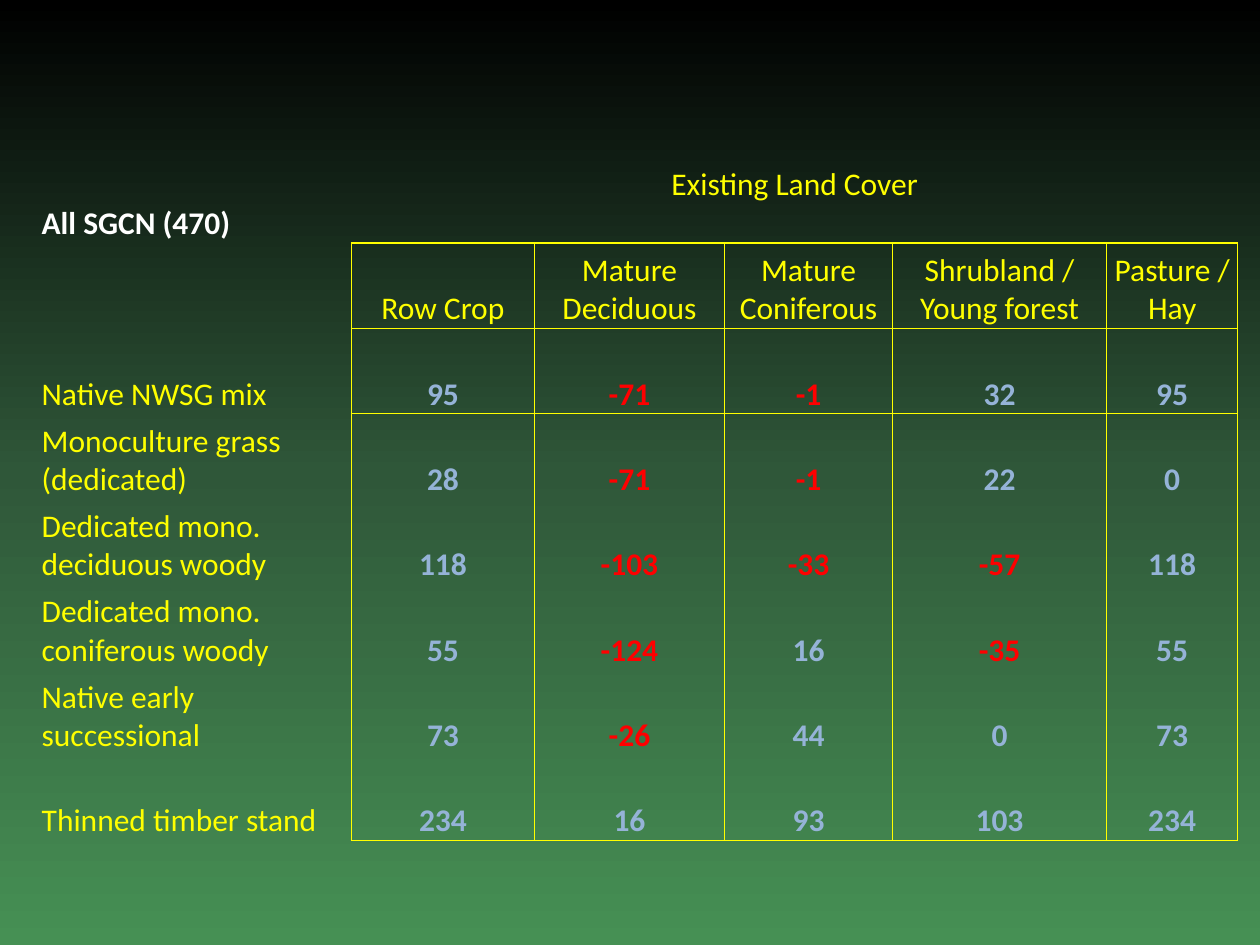
from copy import deepcopy
from dataclasses import dataclass

from lxml import etree
from pptx import Presentation
from pptx.dml.color import RGBColor
from pptx.enum.text import MSO_ANCHOR, PP_ALIGN
from pptx.oxml.ns import qn
from pptx.slide import Slide
from pptx.table import Table, _Cell
from pptx.util import Cm, Pt

BOTTOM = MSO_ANCHOR.BOTTOM
LEFT, CENTER = PP_ALIGN.LEFT, PP_ALIGN.CENTER
FONT, FONT_SIZE = "Calibri", Pt(18)
PLAIN_TABLE_STYLE = "{2D5ABB26-0587-4C30-8999-92F81FD0307C}"

COLORS = {
    "white": "FFFFFF",
    "yellow": "FFFF00",
    "gain": "95B3D7",
    "loss": "FF0000",
}
BACKGROUND_STOPS = [(0, "000000"), (0.5, "2F5739"), (1, "469054")]


@dataclass
class Conversion:
    name: str
    changes: tuple[int, ...]


LAND_COVERS = [
    "Row Crop",
    "Mature Deciduous",
    "Mature Coniferous",
    "Shrubland / Young forest",
    "Pasture / Hay",
]
CONVERSIONS = [
    Conversion("Native NWSG mix", (95, -71, -1, 32, 95)),
    Conversion("Monoculture grass (dedicated)", (28, -71, -1, 22, 0)),
    Conversion("Dedicated mono. deciduous woody", (118, -103, -33, -57, 118)),
    Conversion("Dedicated mono. coniferous woody", (55, -124, 16, -35, 55)),
    Conversion("Native early successional", (73, -26, 44, 0, 73)),
    Conversion("Thinned timber stand", (234, 16, 93, 103, 234)),
]
COLUMN_WIDTHS = [6.25, 3.68, 3.84, 3.38, 4.32, 2.64]
ROW_HEIGHT = 1.72
HEADER_ROWS = 2
ROW_COUNT = HEADER_ROWS + len(CONVERSIONS)


def paint_background(slide: Slide) -> None:
    fill = slide.background.fill
    fill.gradient()
    fill.gradient_angle = 270
    # The default gradient has two stops; add the middle one
    stop_list = next(slide.element.iter(qn("a:gsLst")))
    stop_list.insert(1, deepcopy(stop_list[0]))
    for stop, (position, color) in zip(fill.gradient_stops, BACKGROUND_STOPS):
        stop.position = position
        stop.color.rgb = RGBColor.from_string(color)


def border_sides(row: int, column: int) -> str:
    """Sides to draw, in the order the file format requires."""
    if row == 0:
        return "B" if column else ""
    if column == 0:
        return "R"
    top = "T" if row <= HEADER_ROWS else ""
    bottom = "B" if row in (1, ROW_COUNT - 1) else ""
    return "LR" + top + bottom


def format_cell(cell: _Cell, sides: str) -> None:
    cell.margin_left = cell.margin_right = 0
    cell.margin_top = cell.margin_bottom = 0
    cell.vertical_anchor = BOTTOM
    properties = cell._tc.get_or_add_tcPr()
    for side in sides:
        line = etree.SubElement(properties, qn(f"a:ln{side}"), w=str(Pt(1)))
        solid = etree.SubElement(line, qn("a:solidFill"))
        etree.SubElement(solid, qn("a:srgbClr"), val=COLORS["yellow"])
    cell.fill.background()


def write(cell: _Cell, text: str, color: str = "yellow",
          bold: bool = False, align: PP_ALIGN = CENTER) -> None:
    paragraph = cell.text_frame.paragraphs[0]
    paragraph.alignment = align
    run = paragraph.add_run()
    run.text = text
    run.font.name = FONT
    run.font.size = FONT_SIZE
    run.font.bold = bold
    run.font.color.rgb = RGBColor.from_string(COLORS[color])


def add_plain_table(slide: Slide) -> Table:
    frame = slide.shapes.add_table(
        ROW_COUNT, len(COLUMN_WIDTHS), Cm(0.84), Cm(3.18),
        Cm(sum(COLUMN_WIDTHS)), Cm(ROW_HEIGHT * ROW_COUNT))
    table = frame.table
    table.first_row = table.horz_banding = False
    next(frame.element.iter(qn("a:tableStyleId"))).text = PLAIN_TABLE_STYLE
    for column, width in zip(table.columns, COLUMN_WIDTHS):
        column.width = Cm(width)
    for r, row in enumerate(table.rows):
        row.height = Cm(ROW_HEIGHT)
        for c, cell in enumerate(row.cells):
            format_cell(cell, border_sides(r, c))
    return table


def main() -> None:
    presentation = Presentation()
    presentation.slide_width, presentation.slide_height = Cm(25.4), Cm(19.05)
    slide = presentation.slides.add_slide(presentation.slide_layouts[6])
    paint_background(slide)
    table = add_plain_table(slide)

    # Headings
    write(table.cell(0, 0), "All SGCN (470)", "white", True, LEFT)
    cover_heading = table.cell(0, 1)
    cover_heading.merge(table.cell(0, len(LAND_COVERS)))
    cover_heading.margin_bottom = Cm(0.78)
    write(cover_heading, "Existing Land Cover")
    for c, cover in enumerate(LAND_COVERS, start=1):
        write(table.cell(1, c), cover)

    # Species changes for each conversion
    for r, conversion in enumerate(CONVERSIONS, start=HEADER_ROWS):
        write(table.cell(r, 0), conversion.name, align=LEFT)
        for c, change in enumerate(conversion.changes, start=1):
            color = "loss" if change < 0 else "gain"
            write(table.cell(r, c), str(change), color, True)

    presentation.save("out.pptx")


if __name__ == "__main__":
    main()
